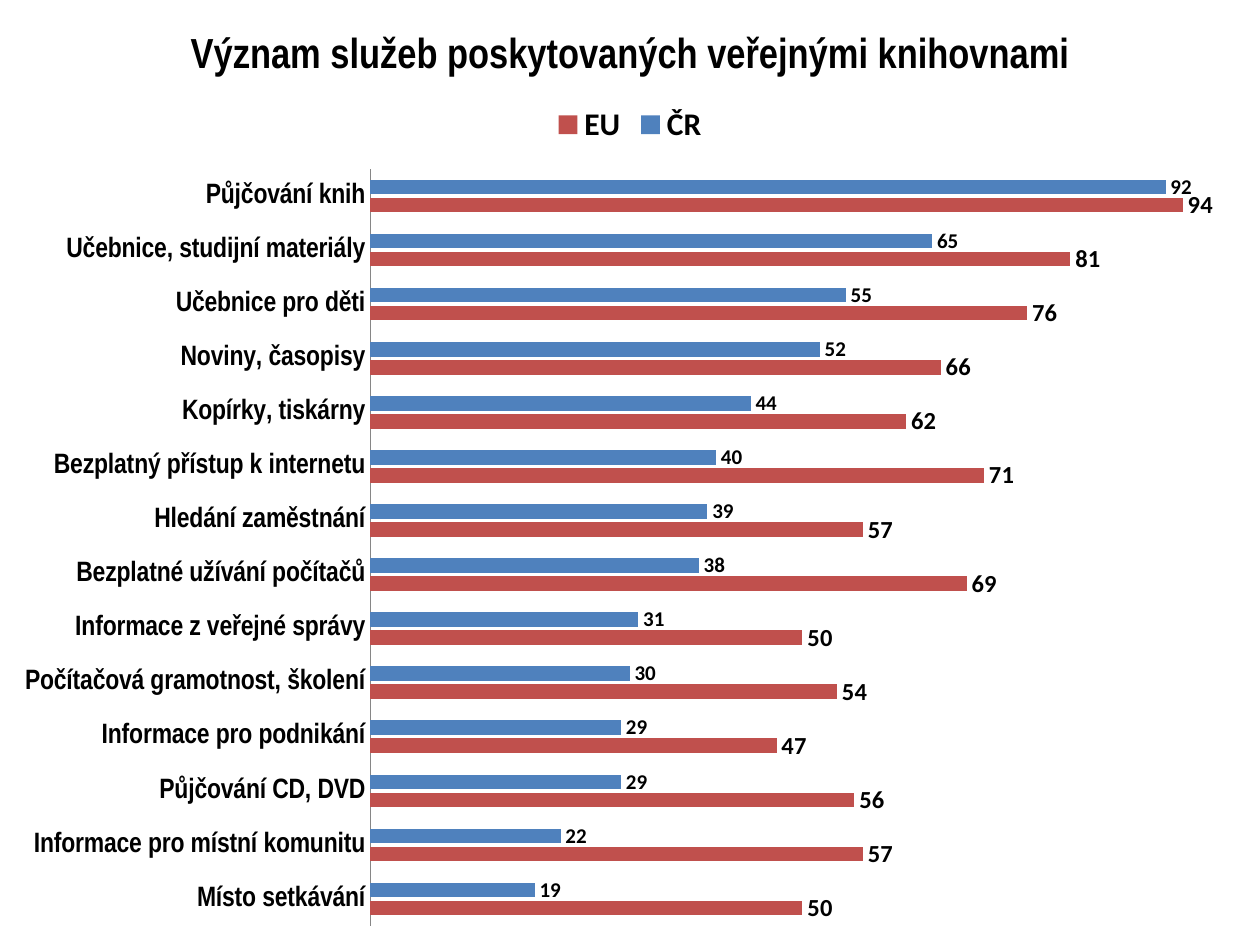
import pptx
import pptx.chart.data
import pptx.dml.color
import pptx.enum.chart
import pptx.oxml
import pptx.oxml.ns
import pptx.util

BLACK = pptx.dml.color.RGBColor(0x00, 0x00, 0x00)
GREY = pptx.dml.color.RGBColor(0x86, 0x86, 0x86)
BLUE = pptx.dml.color.RGBColor(0x4F, 0x81, 0xBD)
RED = pptx.dml.color.RGBColor(0xC0, 0x50, 0x4D)

WIDTH = pptx.util.Cm(25.4)
HEIGHT = pptx.util.Cm(19.05)
HEADING_FONT = "Arial Narrow"
BODY_FONT = "Calibri"

SERVICES = [
    ("Půjčování knih", 92, 94),
    ("Učebnice, studijní materiály", 65, 81),
    ("Učebnice pro děti", 55, 76),
    ("Noviny, časopisy", 52, 66),
    ("Kopírky, tiskárny", 44, 62),
    ("Bezplatný přístup k internetu", 40, 71),
    ("Hledání zaměstnání", 39, 57),
    ("Bezplatné užívání počítačů", 38, 69),
    ("Informace z veřejné správy", 31, 50),
    ("Počítačová gramotnost, školení", 30, 54),
    ("Informace pro podnikání", 29, 47),
    ("Půjčování CD, DVD", 29, 56),
    ("Informace pro místní komunitu", 22, 57),
    ("Místo setkávání", 19, 50),
]


def set_font(font, size, bold=True, name=BODY_FONT, color=BLACK):
    font.size = pptx.util.Pt(size)
    font.bold = bold
    font.name = name
    font.color.rgb = color


def write_text(frame, text, **text_format):
    span = frame.paragraphs[0].add_run()
    span.text = text
    set_font(span.font, **text_format)


def add_services_chart(page):
    names, czech, european = zip(*SERVICES)
    data = pptx.chart.data.CategoryChartData()
    data.categories = names
    data.add_series("ČR", czech)
    data.add_series("EU", european)
    chart = page.shapes.add_chart(
        pptx.enum.chart.XL_CHART_TYPE.BAR_CLUSTERED, 0, 0, WIDTH, HEIGHT, data
    ).chart
    set_font(chart.font, 10, bold=False)
    return chart


def style_axes(chart):
    axis = chart.category_axis
    axis.reverse_order = True
    axis.major_tick_mark = pptx.enum.chart.XL_TICK_MARK.NONE
    axis.format.line.color.rgb = GREY
    set_font(axis.tick_labels.font, 16, name=HEADING_FONT)
    scale = chart.value_axis
    scale.minimum_scale = 0
    scale.maximum_scale = 100
    scale.has_major_gridlines = False
    scale.visible = False


def style_legend(chart):
    chart.has_legend = True
    chart.legend.position = pptx.enum.chart.XL_LEGEND_POSITION.TOP
    chart.legend.include_in_layout = False
    set_font(chart.legend.font, 18)


def style_series(series, color, label_size):
    series.format.fill.solid()
    series.format.fill.fore_color.rgb = color
    series.invert_if_negative = False
    labels = series.data_labels
    labels.show_value = True
    labels.position = pptx.enum.chart.XL_LABEL_POSITION.OUTSIDE_END
    set_font(labels.font, label_size)


def place_plot(chart, **fractions):
    area = chart._chartSpace.chart.plotArea
    for layout in area.findall(pptx.oxml.ns.qn("c:layout")):
        area.remove(layout)
    values = "".join(f'<c:{key} val="{value}"/>' for key, value in fractions.items())
    area.insert(0, pptx.oxml.parse_xml(
        f'<c:layout {pptx.oxml.ns.nsdecls("c")}><c:manualLayout>'
        '<c:layoutTarget val="inner"/><c:xMode val="edge"/><c:yMode val="edge"/>'
        f'{values}</c:manualLayout></c:layout>'
    ))


def main():
    """Build the slide comparing the importance of public library services."""
    deck = pptx.Presentation()
    deck.slide_width, deck.slide_height = WIDTH, HEIGHT
    page = deck.slides.add_slide(deck.slide_layouts[6])
    chart = add_services_chart(page)
    chart.has_title = True
    write_text(chart.chart_title.text_frame,
               "Význam služeb poskytovaných veřejnými knihovnami",
               size=24, name=HEADING_FONT)
    chart.chart_title.include_in_layout = False
    style_axes(chart)
    style_legend(chart)
    plot = chart.plots[0]
    plot.vary_by_categories = False
    plot.gap_width = 150
    plot.overlap = -25
    for series, color, label_size in zip(plot.series, (BLUE, RED), (12, 14)):
        style_series(series, color, label_size)
    place_plot(chart, x=0.294, y=0.179, w=0.686, h=0.801)
    deck.save("out.pptx")


if __name__ == "__main__":
    main()
